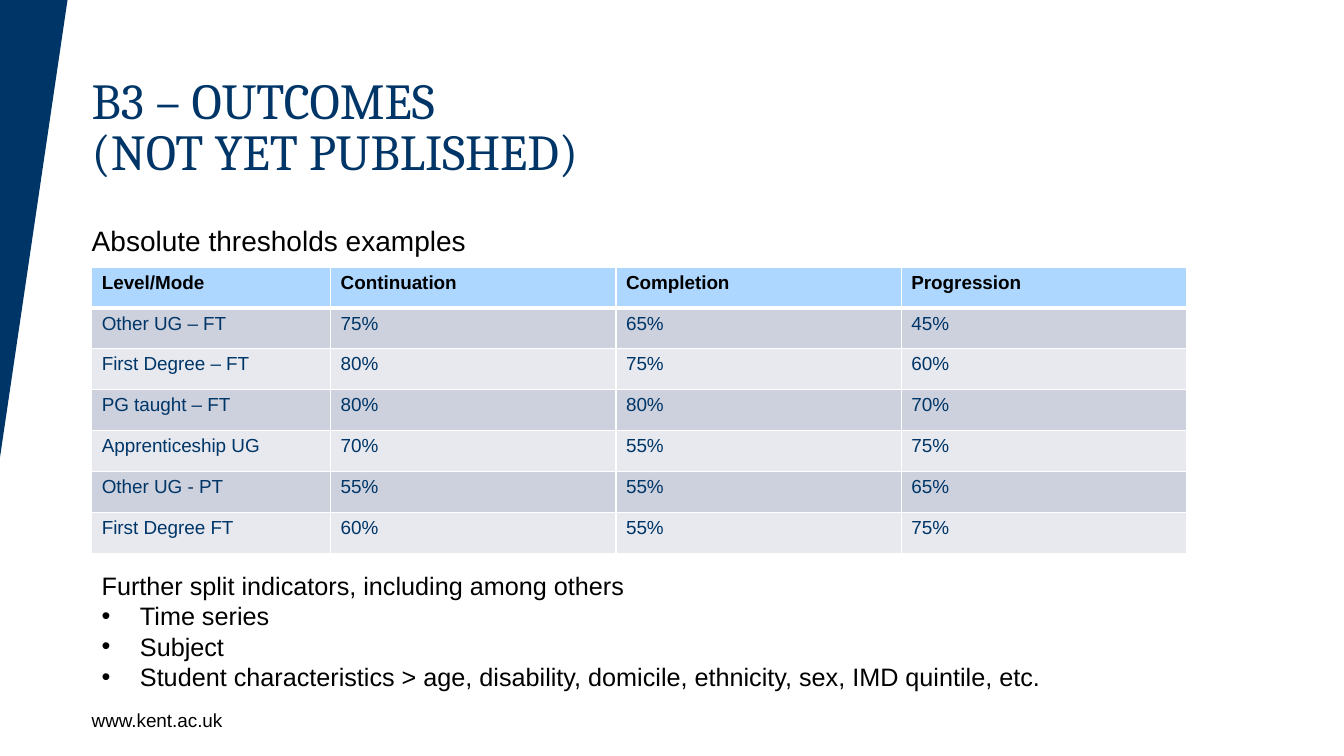
from lxml import etree
from pptx import Presentation
from pptx.dml.color import RGBColor
from pptx.enum.text import MSO_ANCHOR, MSO_AUTO_SIZE, PP_ALIGN
from pptx.oxml import parse_xml
from pptx.oxml.ns import nsdecls, qn
from pptx.util import Pt

PX = 9144
LEFT = PP_ALIGN.LEFT
TOP = MSO_ANCHOR.TOP
NO_AUTOFIT = MSO_AUTO_SIZE.NONE
COLORS = {
    "navy": "003567",
    "black": "000000",
    "white": "FFFFFF",
    "header": "AED7FF",
    "dark_band": "CCD1DD",
    "light_band": "E7E9EF",
}


def place(shape, left, top, width, height, inset=0):
    shape.left, shape.top = left * PX, top * PX
    shape.width, shape.height = width * PX, height * PX
    frame = shape.text_frame
    frame.word_wrap = True
    frame.auto_size = NO_AUTOFIT
    frame.vertical_anchor = TOP
    if not inset:
        frame.margin_left = frame.margin_right = 0
        frame.margin_top = frame.margin_bottom = 0
    return frame


def format_runs(paragraph, size, color, font="Arial", bold=False):
    paragraph.alignment = LEFT
    for run in paragraph.runs:
        run.font.size = Pt(size)
        run.font.name = font
        run.font.bold = bold
        run.font.color.rgb = RGBColor.from_string(COLORS[color])


presentation = Presentation()
presentation.slide_width = 1333 * PX
presentation.slide_height = 750 * PX
slide = presentation.slides.add_slide(presentation.slide_layouts[1])
shapes = slide.shapes

builder = shapes.build_freeform(0, 0, scale=PX)
builder.add_line_segments([(67, 0), (0, 454)], close=True)
wedge = builder.convert_to_shape()
wedge.shadow.inherit = False
wedge.fill.solid()
wedge.fill.fore_color.rgb = RGBColor.from_string(COLORS["navy"])
wedge.line.fill.background()

title = place(shapes.title, 91, 79, 1131, 128)
title.text = "B3 – OUTCOMES\v(NOT YET PUBLISHED)"
title.paragraphs[0].line_spacing = Pt(36)
format_runs(title.paragraphs[0], 36, "navy", "Cambria")

subtitle = place(slide.placeholders[1], 91, 222, 1131, 36)
subtitle.text = "Absolute thresholds examples"
paragraph = subtitle.paragraphs[0]
properties = paragraph._p.get_or_add_pPr()
properties.set("marL", "0")
properties.set("indent", "0")
etree.SubElement(properties, qn("a:buNone"))
paragraph.line_spacing = Pt(24)
paragraph.space_before = Pt(0)
paragraph.space_after = Pt(12)
format_runs(paragraph, 20, "black")

rows = [
    ("Level/Mode", "Continuation", "Completion", "Progression"),
    ("Other UG – FT", "75%", "65%", "45%"),
    ("First Degree – FT", "80%", "75%", "60%"),
    ("PG taught – FT", "80%", "80%", "70%"),
    ("Apprenticeship UG", "70%", "55%", "75%"),
    ("Other UG - PT", "55%", "55%", "65%"),
    ("First Degree FT", "60%", "55%", "75%"),
]
column_widths = [237, 283, 283, 283]
table = shapes.add_table(
    len(rows), len(column_widths), 91 * PX, 265 * PX, sum(column_widths) * PX, 284 * PX
).table
for column, width in zip(table.columns, column_widths):
    column.width = width * PX

for row_index, row in enumerate(rows):
    is_header = row_index == 0
    band = "header" if is_header else ("light_band", "dark_band")[row_index % 2]
    for column_index, value in enumerate(row):
        cell = table.cell(row_index, column_index)
        cell.text = value
        cell.fill.solid()
        cell.fill.fore_color.rgb = RGBColor.from_string(COLORS[band])
        format_runs(
            cell.text_frame.paragraphs[0], 13.5, "black" if is_header else "navy", bold=is_header
        )
        thick_side = {0: "lnB", 1: "lnT"}.get(row_index)
        for position, side in enumerate(("lnL", "lnR", "lnT", "lnB")):
            width = Pt(3 if side == thick_side else 1)
            border = parse_xml(
                f'<a:{side} {nsdecls("a")} w="{width}"><a:solidFill>'
                f'<a:srgbClr val="{COLORS["white"]}"/></a:solidFill></a:{side}>'
            )
            cell._tc.get_or_add_tcPr().insert(position, border)

indicators = place(shapes.add_textbox(0, 0, 0, 0), 91, 561, 1085, 131, inset=True)
indicator_lines = [
    "Further split indicators, including among others",
    "Time series",
    "Subject",
    "Student characteristics > age, disability, domicile, ethnicity, sex, IMD quintile, etc.",
]
indicators.text = "\n".join(indicator_lines)
for index, paragraph in enumerate(indicators.paragraphs):
    if index:
        properties = paragraph._p.get_or_add_pPr()
        properties.set("marL", str(38 * PX))
        properties.set("indent", str(-38 * PX))
        etree.SubElement(properties, qn("a:buFont")).set("typeface", "Arial")
        etree.SubElement(properties, qn("a:buChar")).set("char", "•")
    format_runs(paragraph, 18, "black")

footer = place(shapes.add_textbox(0, 0, 0, 0), 91, 703, 194, 47)
footer.text = "www.kent.ac.uk"
format_runs(footer.paragraphs[0], 13.5, "black")

presentation.save("out.pptx")
